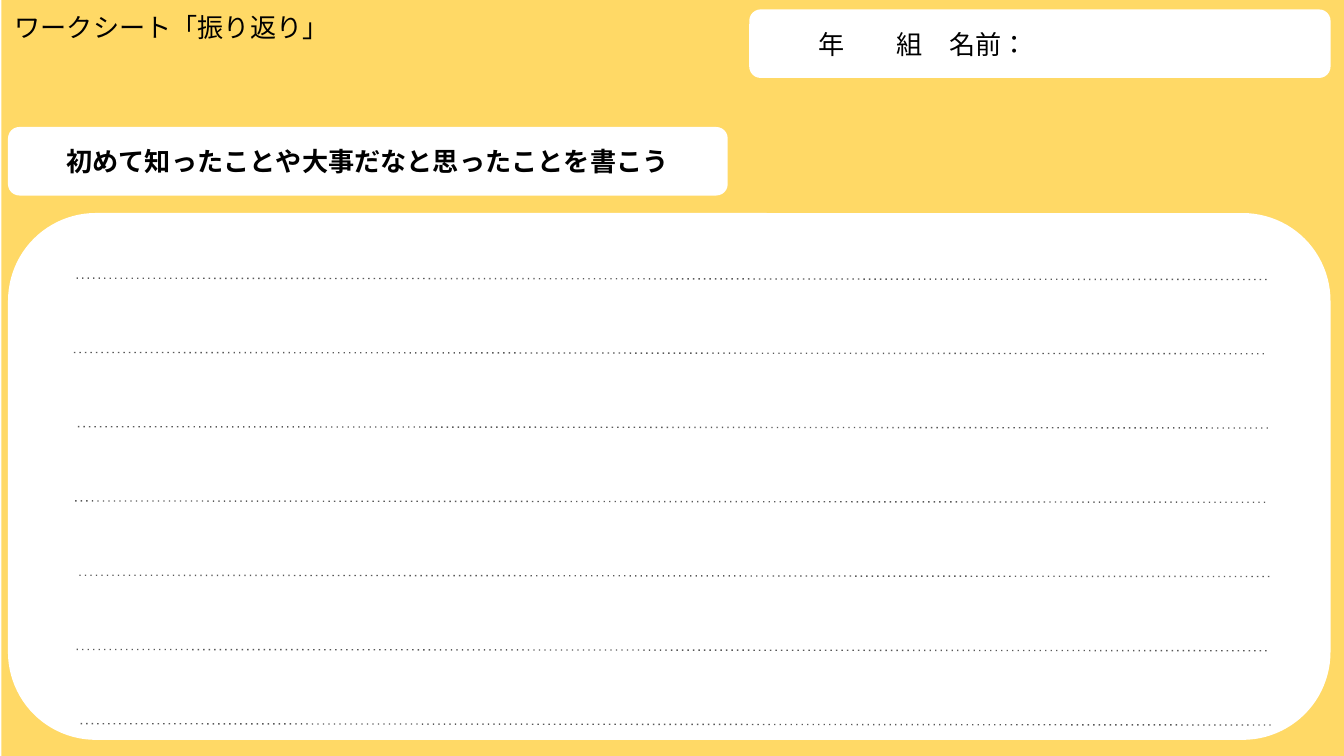
from lxml import etree
from pptx import Presentation
from pptx.dml.color import RGBColor
from pptx.enum.dml import MSO_LINE
from pptx.enum.lang import MSO_LANGUAGE_ID
from pptx.enum.shapes import MSO_CONNECTOR, MSO_SHAPE
from pptx.enum.text import MSO_ANCHOR, PP_ALIGN
from pptx.oxml.ns import qn
from pptx.util import Pt

PX = 4572
PAGE_WIDTH, PAGE_HEIGHT = 2000, 1125
INSET = 20
YELLOW = RGBColor(0xFF, 0xD9, 0x66)
WHITE = RGBColor(0xFF, 0xFF, 0xFF)
BLACK = RGBColor(0, 0, 0)
GRAY = RGBColor(0x59, 0x59, 0x59)
RECTANGLE = MSO_SHAPE.RECTANGLE
ROUNDED = MSO_SHAPE.ROUNDED_RECTANGLE
STRAIGHT = MSO_CONNECTOR.STRAIGHT
DOTTED = MSO_LINE.ROUND_DOT
JAPANESE = MSO_LANGUAGE_ID.JAPANESE
TOP, MIDDLE = MSO_ANCHOR.TOP, MSO_ANCHOR.MIDDLE
LEFT, CENTER = PP_ALIGN.LEFT, PP_ALIGN.CENTER


def to_emu(*lengths):
    """Turn px lengths into EMU."""
    return [round(length * PX) for length in lengths]


def add_panel(page, box, kind, color):
    """Add a plain filled shape without an outline."""
    panel = page.shapes.add_shape(kind, *to_emu(*box))
    panel.shadow.inherit = False
    panel.fill.solid()
    panel.fill.fore_color.rgb = color
    panel.line.fill.background()
    return panel


def write_text(shape, text, anchor, align=LEFT, bold=False):
    """Write one line of worksheet text into a shape."""
    frame = shape.text_frame
    frame.word_wrap = True
    frame.vertical_anchor = anchor
    frame.margin_left, frame.margin_right = to_emu(INSET, INSET)
    frame.margin_top, frame.margin_bottom = to_emu(INSET, INSET)
    para = frame.paragraphs[0]
    para.text = text
    para.alignment = align
    para.font.name = "Arial"
    para.font.size = Pt(14)
    para.font.bold = bold
    para.font.color.rgb = BLACK
    para.runs[0].font.language_id = JAPANESE


def add_title(page, box):
    """Add the worksheet title."""
    title = page.shapes.add_textbox(*to_emu(*box))
    write_text(title, "ワークシート「振り返り」", TOP)


def add_name_field(page, box):
    """Add the field for year, class and name."""
    field = add_panel(page, box, ROUNDED, WHITE)
    write_text(field, "　　年　　組　名前：", MIDDLE)


def add_prompt(page, box):
    """Add the bold writing prompt."""
    prompt = add_panel(page, box, ROUNDED, WHITE)
    write_text(prompt, "初めて知ったことや大事だなと思ったことを書こう", MIDDLE, CENTER, True)


def add_rule(page, start, end):
    """Add one dotted writing line."""
    rule = page.shapes.add_connector(STRAIGHT, *to_emu(*start, *end))
    rule.line.color.rgb = GRAY
    rule.line.width = Pt(0.75)
    rule.line.dash_style = DOTTED
    properties = rule._element.spPr
    properties.find(f".//{qn('a:prstDash')}").set("val", "dot")
    etree.SubElement(properties, qn("a:effectLst"))


def add_writing_area(page, box, rows=7):
    """Add the answer panel with evenly spaced, slightly staggered dotted lines."""
    add_panel(page, box, ROUNDED, WHITE)
    left, top, width, height = box
    first, last = top + 97, top + height - 24
    gap = (last - first) / (rows - 1)
    for row in range(rows):
        x = left + 102 + 2 * (row // 2) - 4 * (row % 2)
        y = first + row * gap
        add_rule(page, (x, y), (x + width - 197, y + 2))


def main():
    """Build and save the reflection worksheet."""
    deck = Presentation()
    deck.slide_width, deck.slide_height = to_emu(PAGE_WIDTH, PAGE_HEIGHT)
    page = deck.slides.add_slide(deck.slide_layouts[6])
    add_panel(page, (2, 0, PAGE_WIDTH, PAGE_HEIGHT), RECTANGLE, YELLOW)
    add_name_field(page, (1115, 14, 865, 102))
    add_prompt(page, (12, 189, 1071, 102))
    add_writing_area(page, (12, 317, 1968, 784))
    add_title(page, (2, -3, 942, 88))
    deck.save("out.pptx")


if __name__ == "__main__":
    main()
